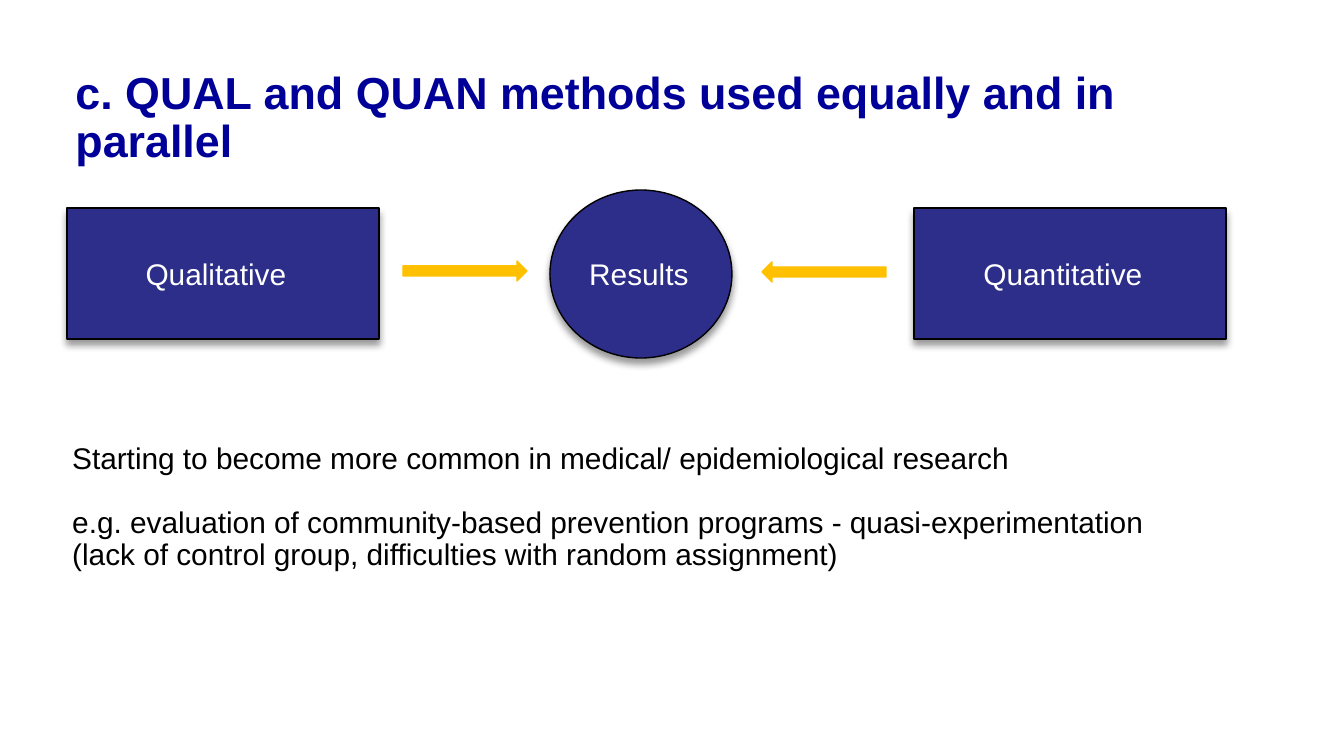
from lxml import etree
from pptx import Presentation
from pptx.dml.color import RGBColor
from pptx.enum.shapes import MSO_SHAPE
from pptx.enum.text import MSO_ANCHOR, PP_ALIGN
from pptx.oxml.ns import qn
from pptx.util import Pt

PX = 9144000 / 1344
FONT = "Arial"
TITLE_BLUE = RGBColor(0x00, 0x00, 0x99)
BOX_BLUE = RGBColor(0x2D, 0x2D, 0x8A)
GOLD = RGBColor(0xFF, 0xC0, 0x00)
BLACK = RGBColor(0x00, 0x00, 0x00)
WHITE = RGBColor(0xFF, 0xFF, 0xFF)
RECT, OVAL, ARROW = MSO_SHAPE.RECTANGLE, MSO_SHAPE.OVAL, MSO_SHAPE.RIGHT_ARROW
LEFT, CENTER = PP_ALIGN.LEFT, PP_ALIGN.CENTER
TOP, MIDDLE = MSO_ANCHOR.TOP, MSO_ANCHOR.MIDDLE


def px(*lengths):
    return [round(n * PX) for n in lengths]


def format_text(tf, size, color, align=LEFT, anchor=TOP, bold=False):
    tf.word_wrap = True
    tf.vertical_anchor = anchor
    for p in tf.paragraphs:
        p.alignment = align
        for r in p.runs:
            r.font.name, r.font.size, r.font.bold = FONT, Pt(size), bold
            r.font.color.rgb = color


prs = Presentation()
prs.slide_width, prs.slide_height = px(1344, 756)
s = prs.slides.add_slide(prs.slide_layouts[5])

# Title
title = s.shapes.title
title.left, title.top, title.width, title.height = px(62, 64, 1219, 95)
tf = title.text_frame
tf.text = "c. QUAL and QUAN methods used equally and in parallel"
format_text(tf, 24, TITLE_BLUE, bold=True)
tf.paragraphs[0].line_spacing = 0.9

# Two methods leading to the results; the labels sit slightly left of centre
for kind, label, x, y, w, h, inset in [
    (RECT, "Qualitative", 67, 208, 312, 131, 28),
    (OVAL, "Results", 550, 190, 182, 168, 8),
    (RECT, "Quantitative", 914, 208, 312, 131, 28),
]:
    sp = s.shapes.add_shape(kind, *px(x, y, w, h))
    sp.fill.solid()
    sp.fill.fore_color.rgb = BOX_BLUE
    sp.line.color.rgb = BLACK
    sp.line.width = Pt(0.75)
    sp.shadow.inherit = False
    effects = sp._element.spPr.find(qn("a:effectLst"))
    shadow = etree.SubElement(effects, qn("a:outerShdw"), blurRad=str(Pt(4)),
                              dist=str(Pt(3)), dir="5400000", rotWithShape="0")
    color = etree.SubElement(shadow, qn("a:srgbClr"), val=str(BLACK))
    etree.SubElement(color, qn("a:alpha"), val="40000")
    tf = sp.text_frame
    tf.text = label
    tf.margin_left, tf.margin_right = px(0, inset // 2)
    format_text(tf, 16, WHITE, CENTER, MIDDLE)

# Arrows pointing at the results
for x, y, rotation in [(403, 261, 0), (762, 262, 180)]:
    sp = s.shapes.add_shape(ARROW, *px(x, y, 124, 20))
    sp.rotation = rotation
    sp.fill.solid()
    sp.fill.fore_color.rgb = GOLD
    sp.line.color.rgb = GOLD
    sp.line.width = Pt(0.75)
    sp.shadow.inherit = False

# Remarks
tf = s.shapes.add_textbox(*px(59, 437, 1098, 144)).text_frame
tf.text = (
    "Starting to become more common in medical/ epidemiological research\n"
    "e.g. evaluation of community-based prevention programs - quasi-experimentation "
    "(lack of control group, difficulties with random assignment)"
)
format_text(tf, 16, BLACK)
for p in tf.paragraphs:
    p.line_spacing = 0.9
tf.paragraphs[1].space_before = Pt(17)

prs.save("out.pptx")
